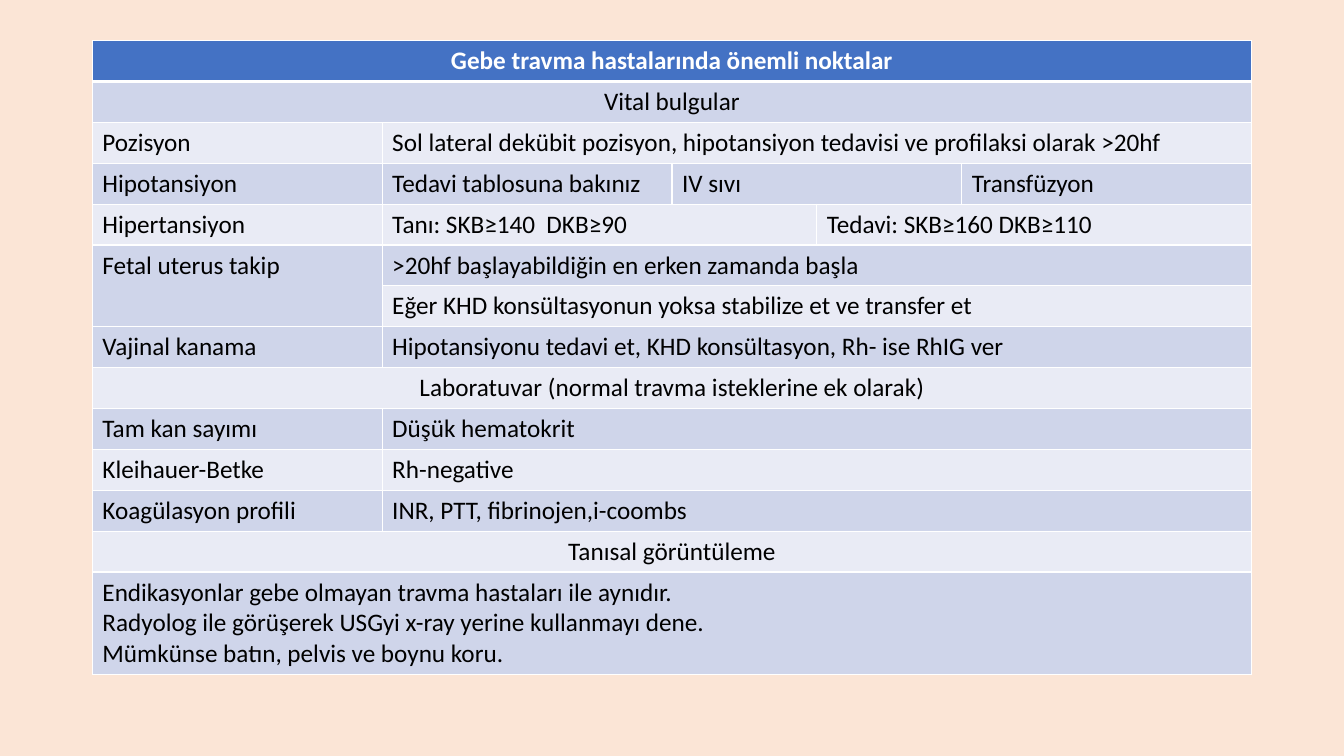
from lxml import etree
from pptx import Presentation
from pptx.dml.color import RGBColor
from pptx.enum.text import PP_ALIGN as Align
from pptx.oxml.ns import qn
from pptx.util import Pt

PEACH = RGBColor(0xFB, 0xE5, 0xD6)
BLUE = RGBColor(0x44, 0x72, 0xC4)
BAND_DARK = RGBColor(0xCF, 0xD5, 0xEA)
BAND_LIGHT = RGBColor(0xE9, 0xEB, 0xF5)
WHITE = RGBColor(0xFF, 0xFF, 0xFF)
BLACK = RGBColor(0x00, 0x00, 0x00)

COL_WIDTHS = [207, 207, 103.5, 103.5, 207]
ROW_HEIGHT = 29.2
LAST_ROW_HEIGHT = 73.2
FETAL_ROW = 5

# Each row lists (text, columns spanned)
ROWS = [
    [("Gebe travma hastalarında önemli noktalar", 5)],
    [("Vital bulgular", 5)],
    [("Pozisyon", 1),
     ("Sol lateral dekübit pozisyon, hipotansiyon tedavisi ve profilaksi olarak >20hf", 4)],
    [("Hipotansiyon", 1), ("Tedavi tablosuna bakınız", 1), ("IV sıvı", 2), ("Transfüzyon", 1)],
    [("Hipertansiyon", 1), ("Tanı: SKB≥140  DKB≥90", 2), ("Tedavi: SKB≥160 DKB≥110", 2)],
    [("Fetal uterus takip", 1), (">20hf başlayabildiğin en erken zamanda başla", 4)],
    [("", 1), ("Eğer KHD konsültasyonun yoksa stabilize et ve transfer et", 4)],
    [("Vajinal kanama", 1), ("Hipotansiyonu tedavi et, KHD konsültasyon, Rh- ise RhIG ver", 4)],
    [("Laboratuvar (normal travma isteklerine ek olarak)", 5)],
    [("Tam kan sayımı", 1), ("Düşük hematokrit", 4)],
    [("Kleihauer-Betke", 1), ("Rh-negative", 4)],
    [("Koagülasyon profili", 1), ("INR, PTT, fibrinojen,i-coombs", 4)],
    [("Tanısal görüntüleme", 5)],
    [("Endikasyonlar gebe olmayan travma hastaları ile aynıdır.\n"
      "Radyolog ile görüşerek USGyi x-ray yerine kullanmayı dene.\n"
      "Mümkünse batın, pelvis ve boynu koru.", 5)],
]
CENTERED_ROWS = {0, 1, 8, 12}


def set_borders(cell, top, bottom):
    tcPr = cell._tc.get_or_add_tcPr()
    for side, width in (("L", 1), ("R", 1), ("T", top), ("B", bottom)):
        ln = etree.SubElement(tcPr, qn("a:ln" + side), w=str(Pt(width)))
        fill = etree.SubElement(ln, qn("a:solidFill"))
        etree.SubElement(fill, qn("a:srgbClr"), val=str(WHITE))


def add_text(cell, text, align, color, bold):
    tf = cell.text_frame
    for i, line in enumerate(text.split("\n")):
        p = tf.add_paragraph() if i else tf.paragraphs[0]
        p.alignment = align
        r = p.add_run()
        r.text = line
        r.font.name = "Calibri"
        r.font.size = Pt(18)
        r.font.bold = bold
        r.font.color.rgb = color


# Slide and background
prs = Presentation()
prs.slide_width, prs.slide_height = Pt(960), Pt(540)
s = prs.slides.add_slide(prs.slide_layouts[6])
s.background.fill.solid()
s.background.fill.fore_color.rgb = PEACH

# Table grid
table_height = ROW_HEIGHT * (len(ROWS) - 1) + LAST_ROW_HEIGHT
table = s.shapes.add_table(len(ROWS), len(COL_WIDTHS), Pt(66), Pt(29),
                           Pt(sum(COL_WIDTHS)), Pt(table_height)).table
table.first_row = table.horz_banding = False
for column, width in zip(table.columns, COL_WIDTHS):
    column.width = Pt(width)
for row in table.rows:
    row.height = Pt(ROW_HEIGHT)
table.rows[len(ROWS) - 1].height = Pt(LAST_ROW_HEIGHT)

# Fills, borders, merges and text
for y, entries in enumerate(ROWS):
    header = y == 0
    band = BLUE if header else BAND_DARK if y % 2 else BAND_LIGHT
    for cell in table.rows[y].cells:
        set_borders(cell, top=3 if y == 1 else 1, bottom=3 if header else 1)
        cell.fill.solid()
        cell.fill.fore_color.rgb = band
    x = 0
    for text, span in entries:
        cell = table.cell(y, x)
        if span > 1:
            cell.merge(table.cell(y, x + span - 1))
        if text:
            add_text(cell, text, Align.CENTER if y in CENTERED_ROWS else Align.LEFT,
                     WHITE if header else BLACK, header)
        x += span

# The fetal monitoring label covers two rows
table.cell(FETAL_ROW, 0).merge(table.cell(FETAL_ROW + 1, 0))

prs.save("out.pptx")
